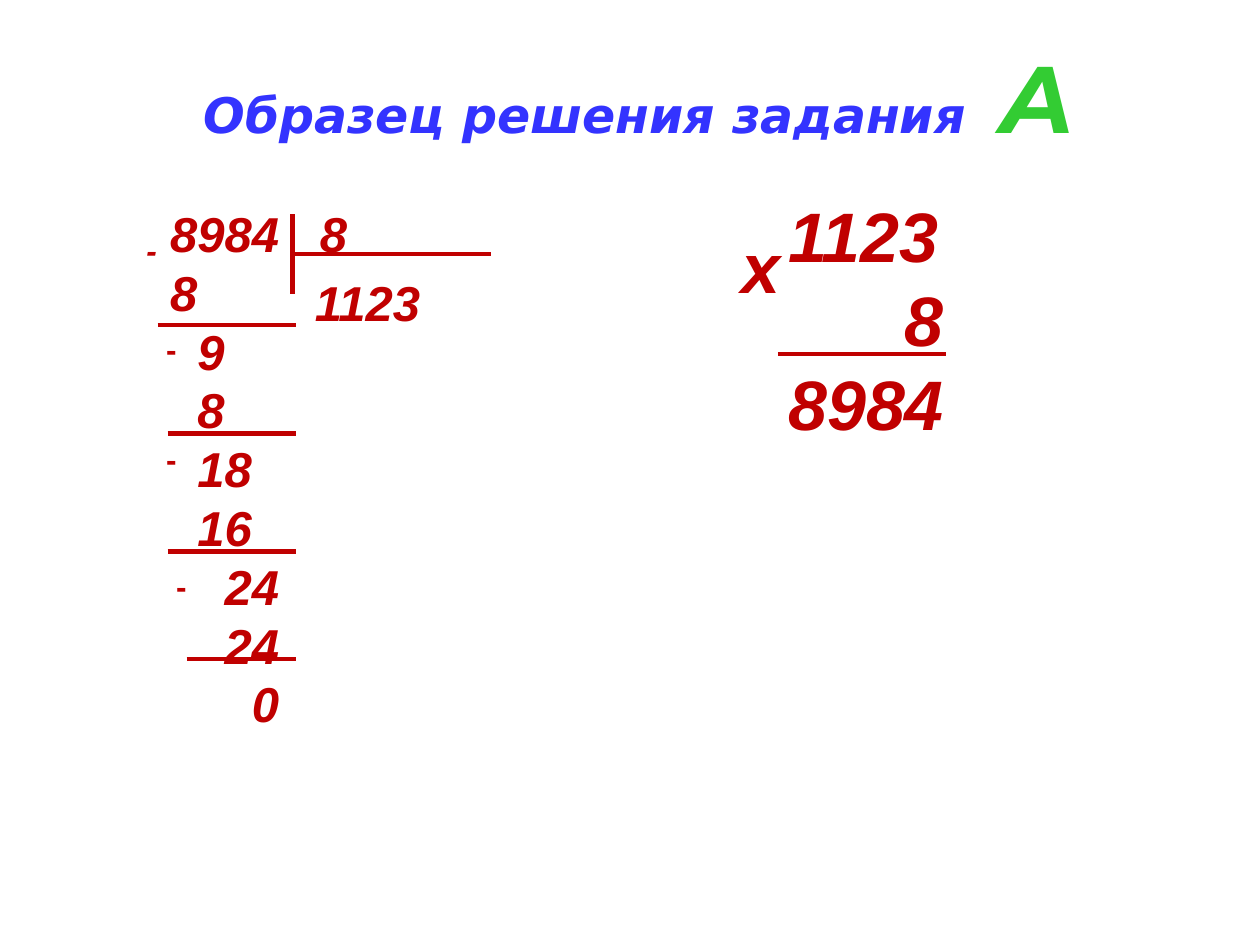
from dataclasses import dataclass

from lxml import etree
from pptx import Presentation
from pptx.dml.color import RGBColor
from pptx.enum.shapes import MSO_CONNECTOR
from pptx.enum.text import MSO_ANCHOR, PP_ALIGN
from pptx.oxml.ns import qn
from pptx.util import Cm, Pt

STRAIGHT = MSO_CONNECTOR.STRAIGHT
TOP = MSO_ANCHOR.TOP
CENTER = PP_ALIGN.CENTER
BLANK = 6


@dataclass
class Theme:
    blue: str = "3333FF"
    green: str = "33CC33"
    red: str = "C00000"
    head: str = "DejaVu Sans"
    mark: str = "Montserrat"
    body: str = "Arial"
    small: int = 18
    mid: int = 28
    large: int = 40
    huge: int = 54
    rule: float = 2.5
    lead: float = 1.2
    digit: float = 0.556  # width of one digit as a share of the type size
    gap: int = 980  # extra width of the space before the letter, 1/100 pt


class Board:
    def __init__(self, slide, theme):
        self.slide = slide
        self.theme = theme

    def style(self, run, face, size, color, italic=True):
        font = run.font
        font.name, font.size = face, Pt(size)
        font.bold, font.italic = True, italic
        font.color.rgb = RGBColor.from_string(color)

    def title(self, words, letter, x, y, w, row, h):
        """Set the heading in a table of one cell; row is its least height."""
        t = self.theme
        frame = self.slide.shapes.add_table(1, 1, *map(Cm, (x, y, w, row)))
        frame.height = Cm(h)
        table = frame.table
        table.first_row = table.horz_banding = False
        cell = table.cell(0, 0)
        cell.fill.background()
        cell.vertical_anchor = TOP
        para = cell.text_frame.paragraphs[0]
        para.alignment = CENTER
        for text, face, size, color in (
            (words, t.head, t.mid, t.blue),
            (" ", t.head, t.mid, t.blue),
            (letter, t.mark, t.huge, t.green),
        ):
            run = para.add_run()
            run.text = text
            self.style(run, face, size, color)
            if text == " ":
                run._r.get_or_add_rPr().set("spc", str(t.gap))

    def digits(self, rows, x, y, w, h, size, italic=True, tab=None):
        """Write (text, indent) rows; indent and tab count digit widths."""
        t = self.theme
        frame = self.slide.shapes.add_textbox(*map(Cm, (x, y, w, h))).text_frame
        frame.word_wrap = True
        frame.text = "\n".join(text for text, _ in rows)
        step = size * t.digit
        for para, (_, shift) in zip(frame.paragraphs, rows):
            para.line_spacing = Pt(size * t.lead)
            props = para._p.get_or_add_pPr()
            if shift:
                props.set("marL", str(Pt(shift * step)))
                props.set("indent", "0")
            if tab and "\t" in para.text:
                stops = etree.SubElement(props, qn("a:tabLst"))
                stop = etree.SubElement(stops, qn("a:tab"))
                stop.set("pos", str(Pt(tab * step)))
                stop.set("algn", "l")
            for run in para.runs:
                self.style(run, t.body, size, t.red, italic)

    def line(self, x1, y1, x2, y2):
        ends = map(Cm, (x1, y1, x2, y2))
        link = self.slide.shapes.add_connector(STRAIGHT, *ends)
        link.line.color.rgb = RGBColor.from_string(self.theme.red)
        link.line.width = Pt(self.theme.rule)
        etree.SubElement(link._element.spPr, qn("a:effectLst"))


def main():
    deck = Presentation()
    deck.slide_width, deck.slide_height = Cm(25.4), Cm(19.05)
    theme = Theme()
    board = Board(deck.slides.add_slide(deck.slide_layouts[BLANK]), theme)

    board.title("Образец решения задания", "А", 2.69, 0.71, 20.4, 0.81, 5.38)

    # Long division
    steps = [("8984\t8", 0), ("8", 0), ("9", 1), ("8", 1), ("18", 1),
             ("16", 1), ("24", 2), ("24", 2), ("0", 3)]
    board.digits(steps, 3.18, 3.98, 5.46, 12.06, theme.mid, tab=5.5)
    board.digits([("1123", 0)], 6.1, 5.36, 3.6, 1.45, theme.mid)
    board.line(5.9, 4.32, 5.9, 5.92)
    board.line(5.9, 5.12, 9.9, 5.12)
    for left, y in ((3.18, 6.55), (3.38, 8.74), (3.38, 11.12), (3.76, 13.29)):
        board.line(left, y, 5.97, y)
    for x, y, italic in ((2.7, 4.53, True), (3.1, 6.53, False),
                         (3.1, 8.74, False), (3.3, 11.3, False)):
        board.digits([("-", 0)], x, y, 0.91, 1.02, theme.small, italic)

    # Column multiplication
    terms = [("1123", 0), ("8", 3), ("8984", 0)]
    board.digits(terms, 15.64, 3.76, 3.9, 5.38, theme.large)
    board.digits([("х", 0)], 14.7, 4.38, 1.4, 1.96, theme.large)
    board.line(15.68, 7.14, 19.08, 7.14)

    deck.save("out.pptx")


if __name__ == "__main__":
    main()
